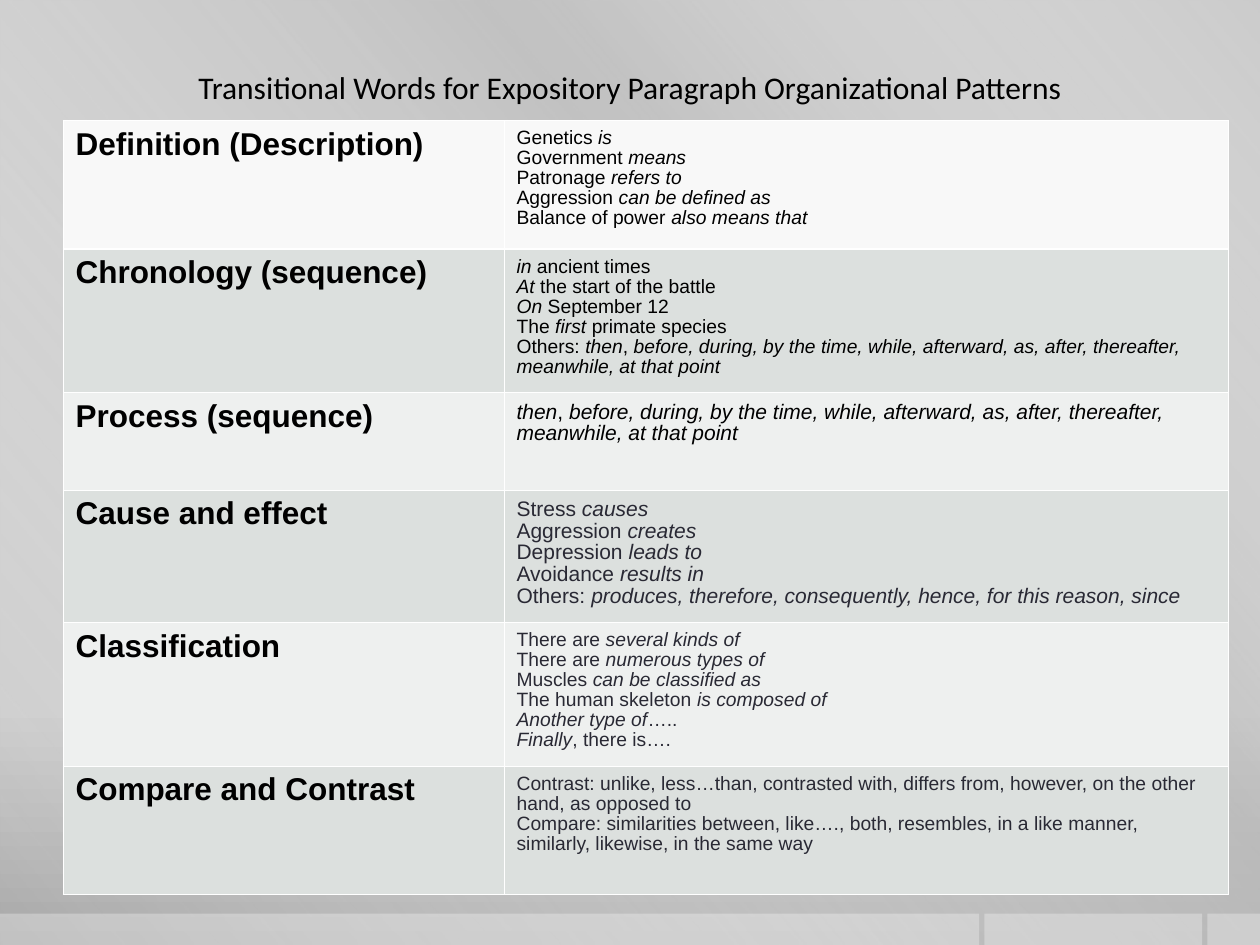
import lxml.etree
import pptx
import pptx.dml.color
import pptx.enum.shapes
import pptx.enum.text
import pptx.oxml.ns
import pptx.util

Pt = pptx.util.Pt
qn = pptx.oxml.ns.qn

COLORS = {
    "text": "000000", "soft_text": "292934", "white": "FFFFFF",
    "first": "F8F8F8", "dark": "DCE0DE", "light": "EEF0EF",
}
TITLE = "Transitional Words for Expository Paragraph Organizational Patterns"
SEQUENCE_WORDS = ("*then*, *before, during, by the time, while, afterward, as, "
                  "after, thereafter, meanwhile, at that point*")

# pattern, row height, example size, example color, row fill, examples
# (asterisks enclose italics)
PATTERNS = [
    ("Definition (Description)", 73.5, 11, "text", "first", [
        "Genetics *is*", "Government *means*", "Patronage *refers to*",
        "Aggression *can be defined as*", "Balance of power *also means that*"]),
    ("Chronology (sequence)", 82, 11, "text", "dark", [
        "*in* ancient times", "*At* the start of the battle", "*On* September 12",
        "The *first *primate species", "Others: " + SEQUENCE_WORDS]),
    ("Process (sequence)", 55.5, 12, "text", "light", [SEQUENCE_WORDS]),
    ("Cause and effect", 75.5, 12, "soft_text", "dark", [
        "Stress *causes*", "Aggression *creates*", "Depression *leads to*",
        "Avoidance *results in*",
        "Others: *produces, therefore, consequently, hence, for this reason, since*"]),
    ("Classification", 82, 11, "soft_text", "light", [
        "There are *several kinds of*", "There are *numerous types of*",
        "Muscles *can be classified as*", "The human skeleton *is composed of*",
        "*Another type of*…..", "*Finally*, there is…."]),
    ("Compare and Contrast", 73.5, 11, "soft_text", "dark", [
        "Contrast: unlike, less…than, contrasted with, differs from, however, "
        "on the other hand, as opposed to",
        "Compare: similarities between, like…., both, resembles, in a like manner, "
        "similarly, likewise, in the same way"]),
]
COLUMN_WIDTHS = [252, 414]
THIN, THICK = 0.45, 1.47

# position, color, opacity, all in percent
BACKDROP_STOPS = [(0, "CBCBCB", 100), (76, "C8C8C8", 100), (100, "A7A7A7", 100)]
SHEEN_STOPS = [(0, "FFFFFF", 0), (34, "BFBFBF", 61), (38, "BFBFBF", 76), (100, "FFFFFF", 0)]
FOOTER_BARS = [(690, 30), (562.5, 124.5), (0, 559.5)]  # left, width


def rgb(name):
    return pptx.dml.color.RGBColor.from_string(COLORS[name])


def add_color(parent, color, opacity):
    clr = lxml.etree.SubElement(parent, qn("a:srgbClr"), val=color)
    if opacity < 100:
        lxml.etree.SubElement(clr, qn("a:alpha"), val=str(opacity * 1000))


def use_gradient(element, stops, angle):
    """Replace the first solid fill inside element with a linear gradient."""
    solid = element.find(".//" + qn("a:solidFill"))
    gradient = lxml.etree.Element(qn("a:gradFill"), rotWithShape="1")
    stop_list = lxml.etree.SubElement(gradient, qn("a:gsLst"))
    for position, color, opacity in stops:
        stop = lxml.etree.SubElement(stop_list, qn("a:gs"), pos=str(position * 1000))
        add_color(stop, color, opacity)
    lxml.etree.SubElement(gradient, qn("a:lin"), ang=str(angle * 60000), scaled="0")
    solid.getparent().replace(solid, gradient)


def add_panel(slide, left, top, width, height):
    panel = slide.shapes.add_shape(pptx.enum.shapes.MSO_SHAPE.RECTANGLE,
                                   Pt(left), Pt(top), Pt(width), Pt(height))
    panel.shadow.inherit = False
    panel.line.fill.background()
    panel.fill.solid()
    panel.fill.fore_color.rgb = rgb("white")
    return panel


def add_backdrop(slide):
    slide.background.fill.solid()
    use_gradient(slide.element, BACKDROP_STOPS, 90)
    sheen = add_panel(slide, 0, 0, 720, 540)
    use_gradient(sheen.element, SHEEN_STOPS, 140)
    for left, width in FOOTER_BARS:
        bar = add_panel(slide, left, 522, width, 18)
        color = bar.element.spPr.find(".//" + qn("a:srgbClr"))
        lxml.etree.SubElement(color, qn("a:alpha"), val="30000")


def add_title(slide):
    frame = slide.shapes.add_textbox(Pt(36), Pt(30), Pt(648), Pt(39)).text_frame
    frame.word_wrap = False
    frame.vertical_anchor = pptx.enum.text.MSO_ANCHOR.MIDDLE
    heading = frame.paragraphs[0]
    heading.text = TITLE
    heading.alignment = pptx.enum.text.PP_ALIGN.CENTER
    heading.font.name = "Calibri"
    heading.font.size = Pt(18)
    heading.font.color.rgb = rgb("text")


def format_cell(cell, fill, top_border, bottom_border):
    cell.margin_left = cell.margin_right = Pt(7.2)
    cell.margin_top, cell.margin_bottom = Pt(5), Pt(3.6)
    properties = cell._tc.get_or_add_tcPr()
    borders = {"L": THIN, "R": THIN, "T": top_border, "B": bottom_border}
    for side, width in borders.items():
        line = lxml.etree.SubElement(properties, qn("a:ln" + side), w=str(int(Pt(width))))
        add_color(lxml.etree.SubElement(line, qn("a:solidFill")), COLORS["white"], 100)
    cell.fill.solid()
    cell.fill.fore_color.rgb = rgb(fill)


def write_lines(cell, lines, size, color, bold):
    frame = cell.text_frame
    for index, line in enumerate(lines):
        paragraph = frame.add_paragraph() if index else frame.paragraphs[0]
        paragraph.line_spacing = 0.93
        paragraph.font.name = "Arial"
        paragraph.font.size = Pt(size)
        paragraph.font.bold = bold
        paragraph.font.color.rgb = rgb(color)
        for part, words in enumerate(line.split("*")):
            if words:
                run = paragraph.add_run()
                run.text = words
                run.font.italic = part % 2 == 1


def add_patterns(slide):
    heights = [pattern[1] for pattern in PATTERNS]
    table = slide.shapes.add_table(len(PATTERNS), len(COLUMN_WIDTHS), Pt(36), Pt(68.75),
                                   Pt(sum(COLUMN_WIDTHS)), Pt(sum(heights))).table
    table.first_row = table.horz_banding = False
    for column, width in zip(table.columns, COLUMN_WIDTHS):
        column.width = Pt(width)
    for index, (name, height, size, color, fill, examples) in enumerate(PATTERNS):
        table.rows[index].height = Pt(height)
        top_border = THICK if index == 1 else THIN
        bottom_border = THICK if index == 0 else THIN
        name_cell, example_cell = table.rows[index].cells
        for cell in (name_cell, example_cell):
            format_cell(cell, fill, top_border, bottom_border)
        write_lines(name_cell, [name], 18, "text", True)
        write_lines(example_cell, examples, size, color, False)


def main():
    deck = pptx.Presentation()
    deck.slide_width, deck.slide_height = Pt(720), Pt(540)
    slide = deck.slides.add_slide(deck.slide_layouts[6])
    add_backdrop(slide)
    add_title(slide)
    add_patterns(slide)
    deck.save("out.pptx")


if __name__ == "__main__":
    main()
